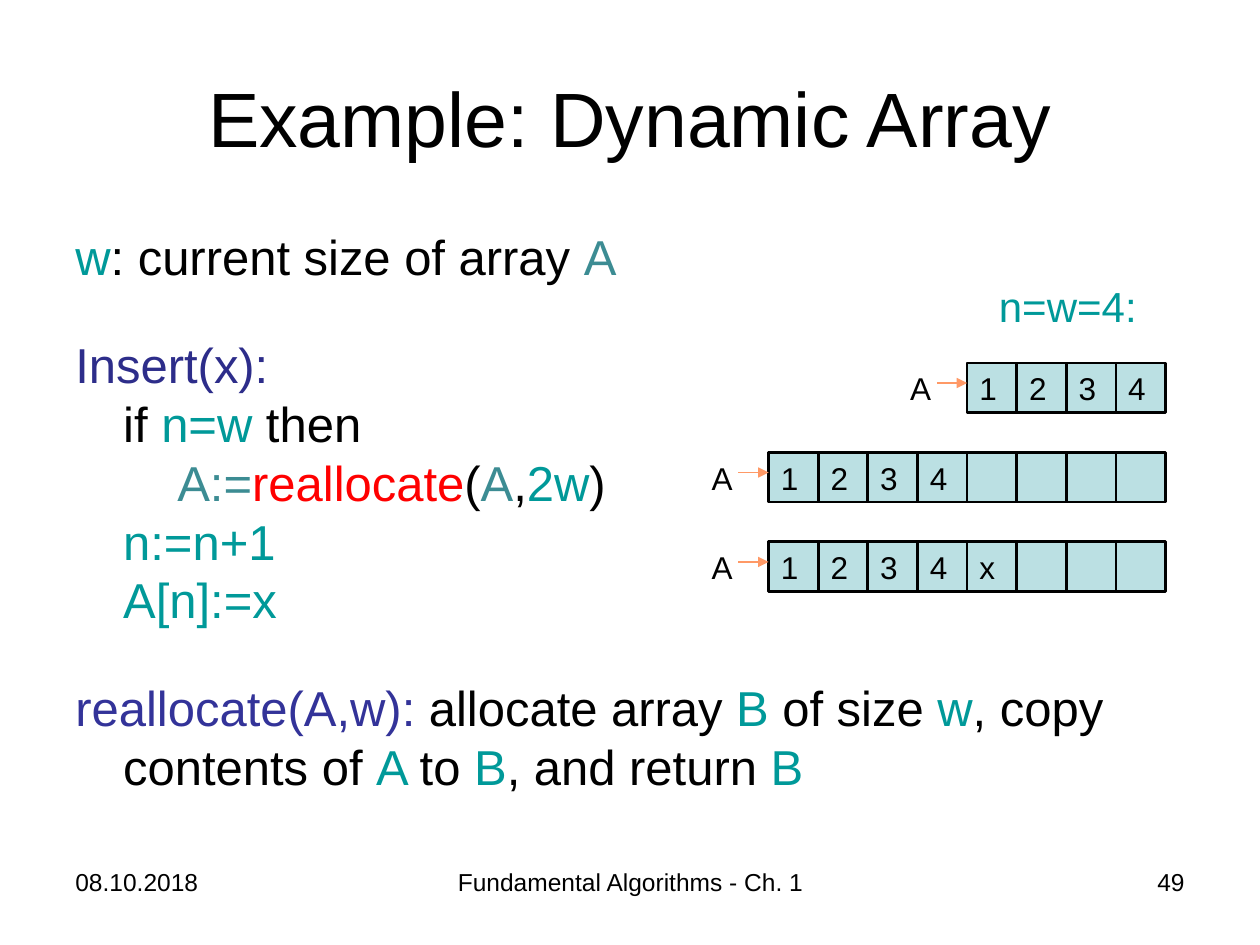
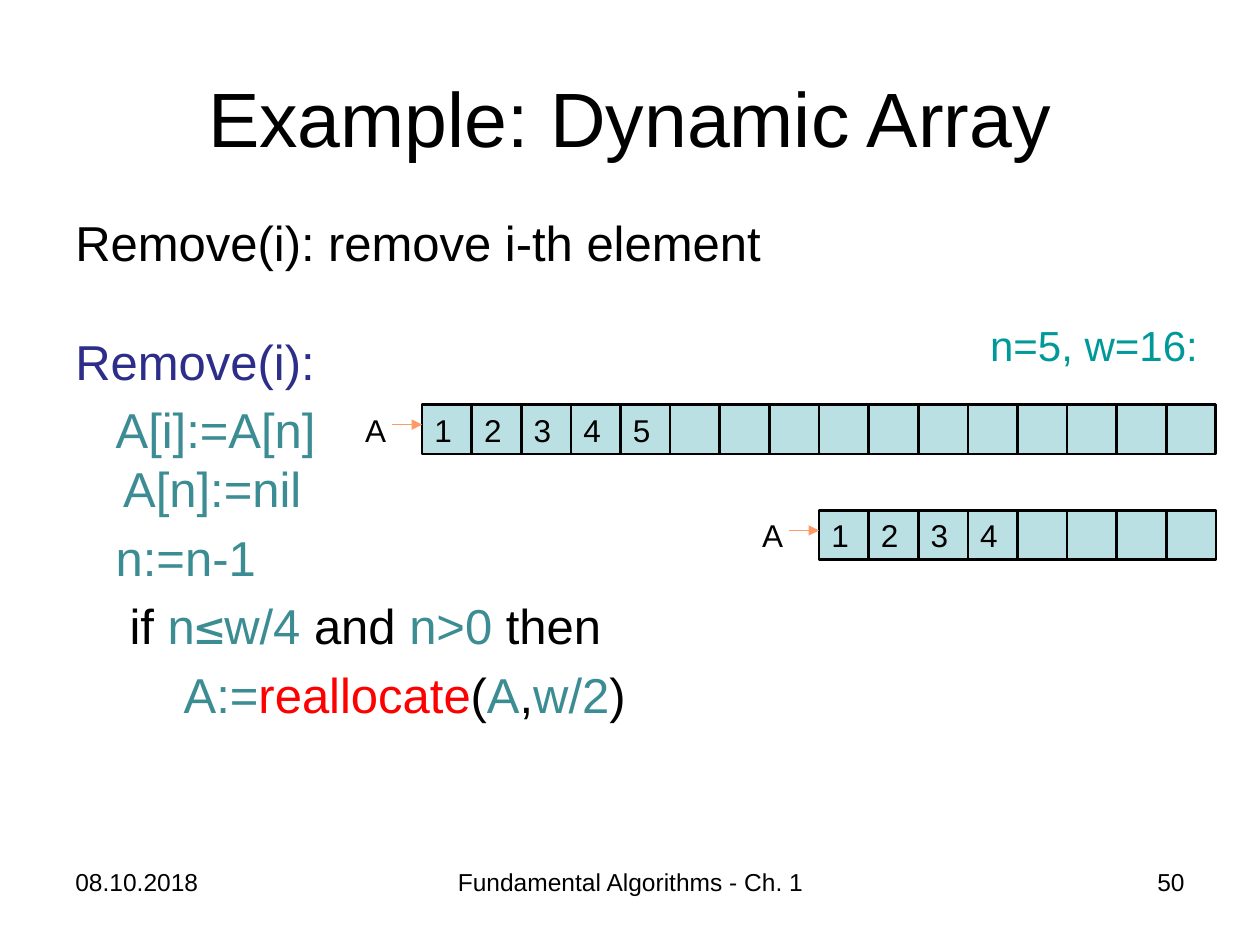
from lxml.etree import SubElement
from pptx import Presentation
from pptx.dml.color import RGBColor
from pptx.enum.shapes import MSO_CONNECTOR, MSO_SHAPE
from pptx.enum.text import MSO_ANCHOR, PP_ALIGN
from pptx.oxml.ns import qn
from pptx.util import Inches, Pt

HUES = {
    "black": "000000",
    "teal": "009999",
    "sea": "3C8C93",
    "navy": "2D2D8A",
    "blue": "333399",
    "red": "FF0000",
    "cell": "BBE0E3",
    "arrow": "FF9966",
}
FONT = "Arial"
MATH = "DejaVu Sans Mono"

FORMS = {
    "title": {"size": Pt(44), "name": FONT},
    "body": {"size": Pt(28), "name": FONT},
    "note": {"size": Pt(24), "name": FONT},
    "cell": {"size": Pt(18), "name": FONT},
    "foot": {"size": Pt(14), "name": FONT},
}
STEP = 6.3 / 16  # width and height of one array cell
HANG = 0.38
GAP = 5.6

# Each line: (left indent, space before in points, runs of (text, colour))
INSERT = [
    (0, 0, [("w", "teal"), (": current size of array ", "black"), ("A", "sea")]),
    (0, 28, [("Insert(x):", "navy")]),
    (HANG, 0, [("if ", "black"), ("n=w ", "teal"), ("then", "black")]),
    (0.81, 0, [("A:=", "sea"), ("reallocate", "red"), ("(", "black"),
               ("A", "sea"), (",", "black"), ("2w", "teal"), (")", "black")]),
    (HANG, 0, [("n:=n+1", "teal")]),
    (HANG, 0, [("A[n]:=x", "teal")]),
    (0, 28, [("reallocate(A,w): ", "blue"), ("allocate array ", "black"),
             ("B ", "teal"), ("of size ", "black"), ("w", "teal"),
             (", copy contents of ", "black"), ("A ", "teal"), ("to", "black"),
             (" B", "teal"), (", and return ", "black"), ("B", "teal")]),
]
REMOVE = [
    (0, 0, [("Remove(i): remove i-th element", "black")]),
    (0, 34, [("Remove(i):", "navy")]),
    (0.32, GAP, [("A[i]:=A[n]", "sea")]),
    (HANG, 0, [("A[n]:=nil", "sea")]),
    (0.32, GAP, [("n:=n-1", "sea")]),
    (0.43, GAP, [("if ", "black"), ("n", "sea"), ("≤", "sea"), ("w/4 ", "sea"),
                 ("and ", "black"), ("n>0 ", "sea"), ("then", "black")]),
    (0.86, GAP, [("A:=", "sea"), ("reallocate", "red"), ("(", "black"),
                 ("A", "sea"), (",", "black"), ("w/2", "sea"), (")", "black")]),
]


def tint(name):
    return RGBColor.from_string(HUES[name])


def add_run(para, text, form, hue):
    run = para.add_run()
    run.text = text
    for key, value in FORMS[form].items():
        setattr(run.font, key, value)
    run.font.color.rgb = tint(hue)
    if text == "≤":
        run.font.name = MATH


def add_frame(slide, x, y, w, h):
    box = slide.shapes.add_textbox(Inches(x), Inches(y), Inches(w), Inches(h))
    box.text_frame.word_wrap = True
    return box.text_frame


def add_text(slide, text, form, x, y, w, h, hue="black", align=PP_ALIGN.LEFT):
    frame = add_frame(slide, x, y, w, h)
    para = frame.paragraphs[0]
    para.alignment = align
    add_run(para, text, form, hue)
    return frame


def add_body(slide, y, h, lines):
    """Write coloured lines; wrapped text of flush lines hangs."""
    frame = add_frame(slide, 0.5, y, 9, h)
    for i, (left, gap, runs) in enumerate(lines):
        para = frame.add_paragraph() if i else frame.paragraphs[0]
        para.space_before = Pt(gap)
        props = para._p.get_or_add_pPr()
        props.set("marL", str(Inches(left or HANG)))
        props.set("indent", str(0 if left else -Inches(HANG)))
        for text, hue in runs:
            add_run(para, text, "body", hue)


def add_line(slide, x1, y1, x2, y2, hue="black", width=1.5, head=False):
    line = slide.shapes.add_connector(
        MSO_CONNECTOR.STRAIGHT, Inches(x1), Inches(y1), Inches(x2), Inches(y2))
    line.line.color.rgb = tint(hue)
    line.line.width = Pt(width)
    if head:
        tip = SubElement(line.line._get_or_add_ln(), qn("a:tailEnd"))
        tip.set("type", "triangle")
    SubElement(line._element.spPr, qn("a:effectLst"))


def add_array(slide, right, y, count, items):
    """Draw an array of count cells that ends at right, with its pointer A."""
    left = right - count * STEP
    bar = slide.shapes.add_shape(
        MSO_SHAPE.RECTANGLE, Inches(left), Inches(y),
        Inches(count * STEP), Inches(STEP))
    bar.shadow.inherit = False
    bar.fill.solid()
    bar.fill.fore_color.rgb = tint("cell")
    bar.line.color.rgb = tint("black")
    bar.line.width = Pt(1.5)
    for i in range(1, count):
        x = left + i * STEP
        add_line(slide, x, y, x, y + STEP)
    for i, item in enumerate(items):
        add_text(slide, item, "cell", left + i * STEP, y, STEP, 0.5)
    add_text(slide, "A", "cell", left - 0.55, y, 0.43, 0.5)
    add_line(slide, left - 0.24, y + 0.16, left, y + 0.16, "arrow", 0.75, True)


def add_page(deck, number):
    """Add a blank slide with the shared title and footer."""
    slide = deck.slides.add_slide(deck.slide_layouts[6])
    title = add_text(slide, "Example: Dynamic Array", "title",
                     0.5, 0.3, 9, 1.25, align=PP_ALIGN.CENTER)
    title.vertical_anchor = MSO_ANCHOR.MIDDLE
    feet = [
        ("08.10.2018", 0.5, 2.33, PP_ALIGN.LEFT),
        ("Fundamental Algorithms - Ch. 1", 3.42, 3.17, PP_ALIGN.CENTER),
        (str(number), 7.17, 2.33, PP_ALIGN.RIGHT),
    ]
    for text, x, w, align in feet:
        add_text(slide, text, "foot", x, 6.83, w, 0.52, align=align)
    return slide


def main():
    deck = Presentation()
    deck.slide_width = Inches(10)
    deck.slide_height = Inches(7.5)

    slide = add_page(deck, 49)
    add_body(slide, 1.75, 4.95, INSERT)
    for row, (count, items) in enumerate([(4, "1234"), (8, "1234"), (8, "1234x")]):
        add_array(slide, 9.25, 2.88 + row * 0.71, count, items)
    add_text(slide, "n=w=4:", "note", 7.83, 2.18, 1.5, 0.5, "teal")

    slide = add_page(deck, 50)
    add_body(slide, 1.64, 5.42, REMOVE)
    add_array(slide, 9.65, 3.21, 16, "12345")
    add_array(slide, 9.65, 4.05, 8, "1234")
    add_text(slide, "n=5, w=16:", "note", 7.76, 2.49, 2, 0.5, "teal")

    deck.save("out.pptx")


if __name__ == "__main__":
    main()
